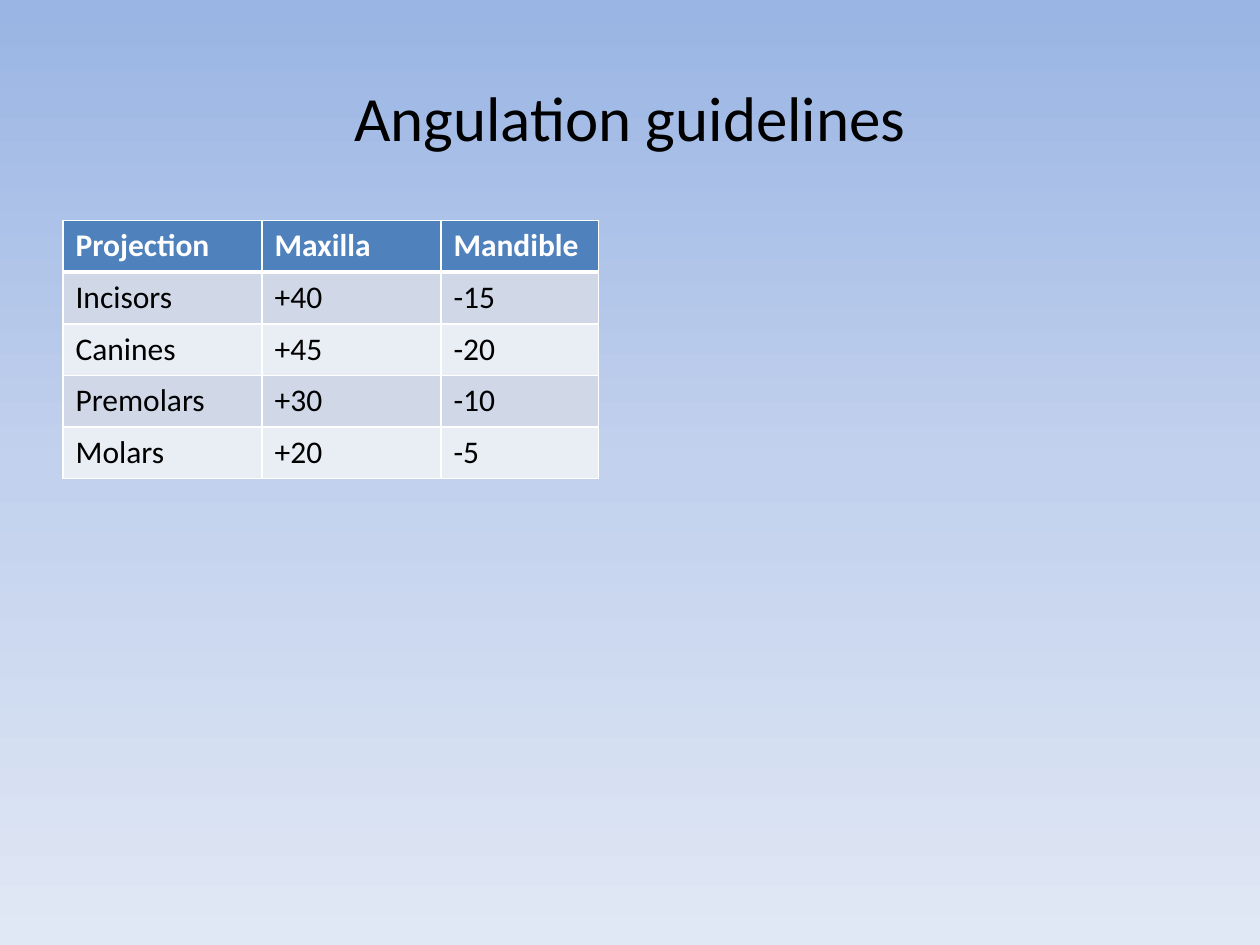
"""Build the angulation guidelines slide."""
import copy
import dataclasses

import lxml.etree
import pptx
import pptx.dml.color
import pptx.enum.text
import pptx.oxml.ns
import pptx.util

Inches = pptx.util.Inches
qn = pptx.oxml.ns.qn


@dataclasses.dataclass(frozen=True)
class Theme:
    font: str = "Calibri"
    title_size: int = 36
    table_size: int = 18
    text: str = "000000"
    header_text: str = "FFFFFF"
    header_fill: str = "4F81BD"
    band_fills: tuple = ("D0D8E8", "E9EDF4")
    border: str = "FFFFFF"
    thin: int = 1
    thick: int = 3
    background: tuple = ((0, "9AB5E4"), (0.5, "C2D1ED"), (1, "E1E8F5"))


def color(value):
    return pptx.dml.color.RGBColor.from_string(value)


class SlideBuilder:
    def __init__(self, presentation, theme):
        self.theme = theme
        self.slide = presentation.slides.add_slide(presentation.slide_layouts[5])

    def set_background(self):
        fill = self.slide.background.fill
        fill.gradient()
        fill.gradient_angle = 270
        stop_list = self.slide.element.find(".//" + qn("a:gsLst"))
        stop_list.append(copy.deepcopy(stop_list[-1]))
        for stop, (position, value) in zip(fill.gradient_stops, self.theme.background):
            stop.position = position
            stop.color.rgb = color(value)

    def format_text(self, paragraph, size, value, bold=False):
        font = paragraph.runs[0].font
        formats = {"name": self.theme.font, "size": pptx.util.Pt(size), "bold": bold}
        for name, setting in formats.items():
            setattr(font, name, setting)
        font.color.rgb = color(value)

    def add_title(self, text, left, top, width, height):
        title = self.slide.shapes.title
        places = {"left": left, "top": top, "width": width, "height": height}
        for name, length in places.items():
            setattr(title, name, Inches(length))
        title.text_frame.text = text
        title.text_frame.vertical_anchor = pptx.enum.text.MSO_ANCHOR.MIDDLE
        paragraph = title.text_frame.paragraphs[0]
        paragraph.alignment = pptx.enum.text.PP_ALIGN.CENTER
        self.format_text(paragraph, self.theme.title_size, self.theme.text)

    def set_borders(self, cell, row_index):
        theme = self.theme
        widths = {"lnL": theme.thin, "lnR": theme.thin,
                  "lnT": theme.thick if row_index == 1 else theme.thin,
                  "lnB": theme.thick if row_index == 0 else theme.thin}
        properties = cell._tc.get_or_add_tcPr()
        for side, width in widths.items():
            line = lxml.etree.SubElement(
                properties, qn(f"a:{side}"), w=str(pptx.util.Pt(width)))
            fill = lxml.etree.SubElement(line, qn("a:solidFill"))
            lxml.etree.SubElement(fill, qn("a:srgbClr"), val=theme.border)

    def add_table(self, rows, left, top, column_widths, row_height):
        theme = self.theme
        table = self.slide.shapes.add_table(
            len(rows), len(column_widths), Inches(left), Inches(top),
            Inches(sum(column_widths)), Inches(row_height * len(rows))).table
        for column, width in zip(table.columns, column_widths):
            column.width = Inches(width)
        for row_index, values in enumerate(rows):
            header = row_index == 0
            fill = theme.header_fill if header else theme.band_fills[(row_index - 1) % 2]
            text_color = theme.header_text if header else theme.text
            for column_index, value in enumerate(values):
                cell = table.cell(row_index, column_index)
                cell.text = value
                self.set_borders(cell, row_index)
                cell.fill.solid()
                cell.fill.fore_color.rgb = color(fill)
                self.format_text(cell.text_frame.paragraphs[0],
                                 theme.table_size, text_color, header)


def main():
    presentation = pptx.Presentation()
    presentation.slide_width = Inches(10)
    presentation.slide_height = Inches(7.5)
    builder = SlideBuilder(presentation, Theme())
    builder.set_background()
    builder.add_title("Angulation guidelines", 0.5, 0.3, 9, 1.25)
    rows = [
        ("Projection", "Maxilla", "Mandible"),
        ("Incisors", "+40", "-15"),
        ("Canines", "+45", "-20"),
        ("Premolars", "+30", "-10"),
        ("Molars", "+20", "-5"),
    ]
    builder.add_table(rows, 0.5, 1.75, (1.58, 1.42, 1.25), 0.41)
    presentation.save("out.pptx")


if __name__ == "__main__":
    main()
